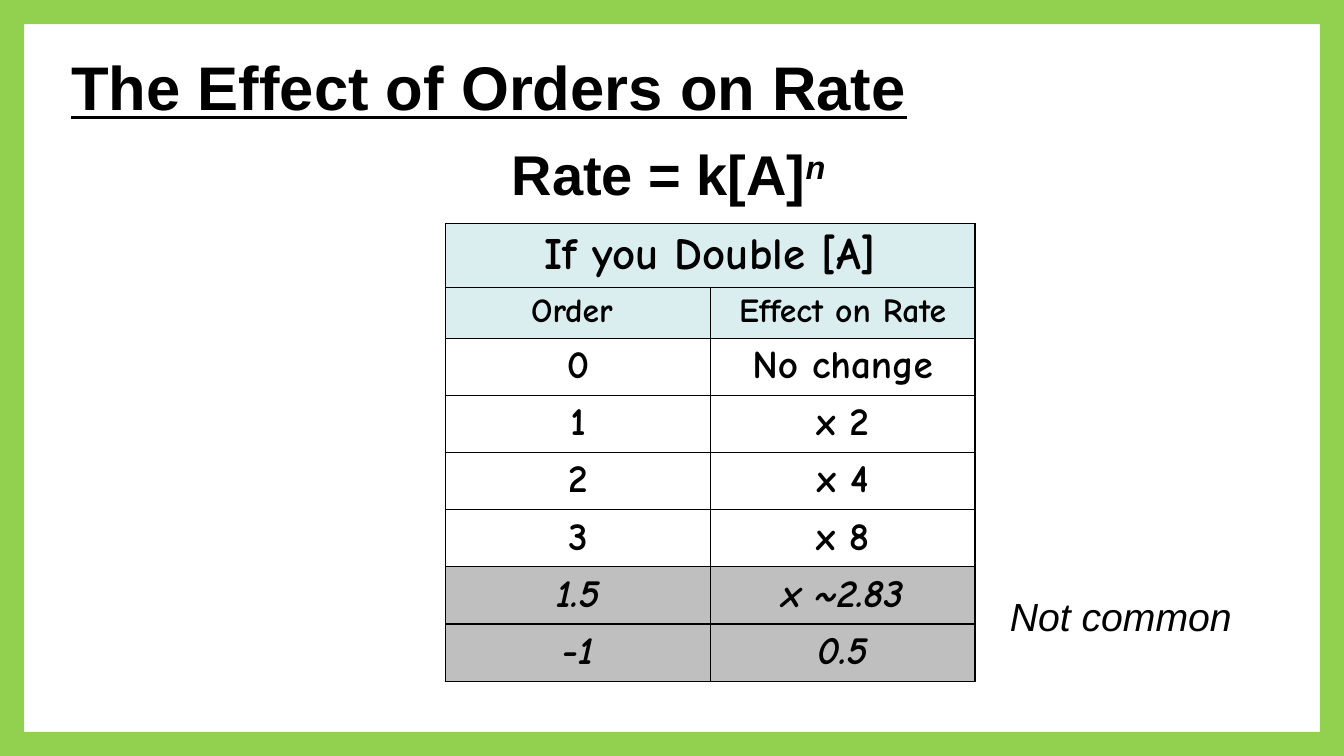
import pptx
import pptx.dml.color
import pptx.enum.shapes
import pptx.enum.text
import pptx.oxml
import pptx.oxml.ns
import pptx.util
from pptx.util import Cm

BLACK = pptx.dml.color.RGBColor(0x00, 0x00, 0x00)
WHITE = pptx.dml.color.RGBColor(0xFF, 0xFF, 0xFF)
GREEN = pptx.dml.color.RGBColor(0x92, 0xD0, 0x50)
PALE_BLUE = pptx.dml.color.RGBColor(0xDA, 0xED, 0xEF)
GREY = pptx.dml.color.RGBColor(0xBF, 0xBF, 0xBF)

TITLE = "The Effect of Orders on Rate"
RATE_LAW, EXPONENT = "Rate = k[A]", "n"
REMARK = "Not common"
TABLE_TITLE = ("If you Double [A]",)
HEADINGS = ("Order ", "Effect on Rate")
COMMON = [("0", "No change"), ("1", "x 2"), ("2", "x 4"), ("3", "x 8")]
UNCOMMON = [("1.5", "x ~2.83"), ("-1", "0.5")]

ROWS = (
    [(TABLE_TITLE, 32, False, PALE_BLUE, 1.56), (HEADINGS, 24, False, PALE_BLUE, 1.23)]
    + [(values, 28, False, WHITE, 1.39) for values in COMMON]
    + [(values, 28, True, GREY, 1.39) for values in UNCOMMON]
)
COLUMN_WIDTH = 6.67
TABLE_LEFT, TABLE_TOP = 11.23, 5.64

deck = pptx.Presentation()
deck.slide_width, deck.slide_height = Cm(33.87), Cm(19.05)
page = deck.slides.add_slide(deck.slide_layouts[6])


def write(para, text, size, font="Arial", bold=False, italic=False, underline=False, raised=False):
    span = para.add_run()
    span.text = text
    span.font.size = pptx.util.Pt(size)
    span.font.name = font
    span.font.bold = bold
    span.font.italic = italic
    span.font.underline = underline
    span.font.color.rgb = BLACK
    if raised:
        span._r.get_or_add_rPr().set("baseline", "30000")


def add_box(left, top, width, height, wrap=True):
    box = page.shapes.add_textbox(Cm(left), Cm(top), Cm(width), Cm(height))
    box.text_frame.word_wrap = wrap
    return box.text_frame


def draw_borders(cell):
    properties = cell._tc.get_or_add_tcPr()
    for position, side in enumerate(("lnL", "lnR", "lnT", "lnB")):
        border = pptx.oxml.parse_xml(
            f'<a:{side} {pptx.oxml.ns.nsdecls("a")} w="12700">'
            f'<a:solidFill><a:srgbClr val="{BLACK}"/></a:solidFill></a:{side}>'
        )
        properties.insert(position, border)


title = add_box(1.55, 0.58, 21.59, 3.18)
title.vertical_anchor = pptx.enum.text.MSO_ANCHOR.MIDDLE
write(title.paragraphs[0], TITLE, 44, bold=True, underline=True)

frame = page.shapes.add_shape(
    pptx.enum.shapes.MSO_SHAPE.FRAME, 0, 0, deck.slide_width, deck.slide_height
)
frame.adjustments[0] = 0.032
frame.shadow.inherit = False
frame.fill.solid()
frame.fill.fore_color.rgb = GREEN
frame.line.fill.background()

table = page.shapes.add_table(
    len(ROWS), len(HEADINGS), Cm(TABLE_LEFT), Cm(TABLE_TOP),
    Cm(COLUMN_WIDTH * len(HEADINGS)), Cm(sum(row[-1] for row in ROWS)),
).table
table.horz_banding = False
for column in table.columns:
    column.width = Cm(COLUMN_WIDTH)
table.cell(0, 0).merge(table.cell(0, 1))

for row, (values, size, italic, colour, height) in zip(table.rows, ROWS):
    row.height = Cm(height)
    for cell in row.cells:
        cell.fill.solid()
        cell.fill.fore_color.rgb = colour
        draw_borders(cell)
    for cell, value in zip(row.cells, values):
        para = cell.text_frame.paragraphs[0]
        para.alignment = pptx.enum.text.PP_ALIGN.CENTER
        write(para, value, size, font="Comic Neue", bold=True, italic=italic)

rate_law = add_box(12.65, 3.4, 8.59, 1.96, wrap=False).paragraphs[0]
write(rate_law, RATE_LAW, 40, bold=True)
write(rate_law, EXPONENT, 40, bold=True, italic=True, raised=True)

write(add_box(25.2, 14.81, 6.35, 1.45).paragraphs[0], REMARK, 28, italic=True)

deck.save("out.pptx")
